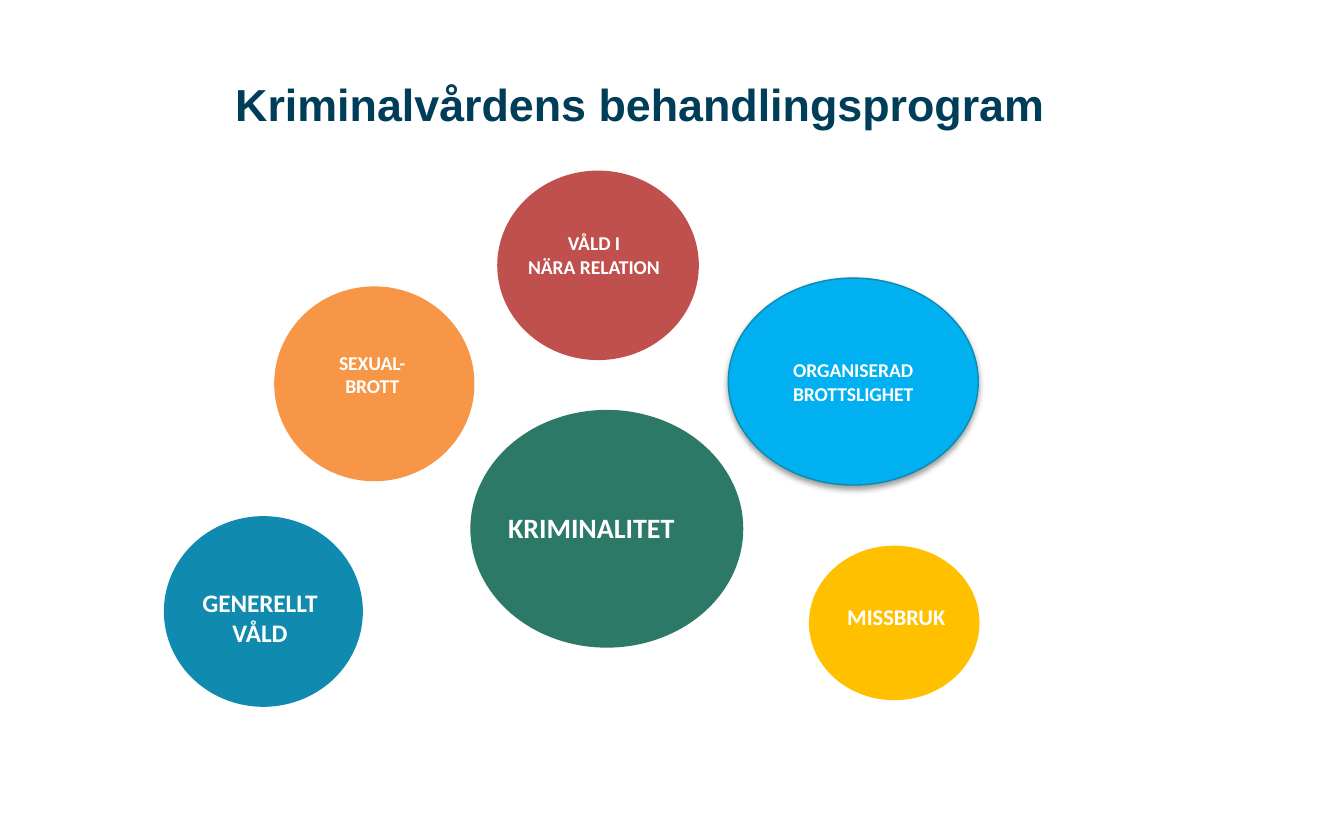
import pptx
import pptx.dml.color
import pptx.enum.shapes
import pptx.enum.text
import pptx.oxml
import pptx.util
from pptx.dml.color import RGBColor
from pptx.enum.text import MSO_ANCHOR, PP_ALIGN
from pptx.util import Pt

NAVY = RGBColor(0x00, 0x3D, 0x58)
WHITE = RGBColor(0xFF, 0xFF, 0xFF)
GREEN = RGBColor(0x2B, 0x79, 0x66)
TEAL = RGBColor(0x10, 0x8B, 0xAF)
RED = RGBColor(0xC0, 0x50, 0x4D)
ORANGE = RGBColor(0xF7, 0x96, 0x46)
YELLOW = RGBColor(0xFF, 0xC0, 0x00)
SKY = RGBColor(0x00, 0xB0, 0xF0)
SKY_EDGE = RGBColor(0x0C, 0x8A, 0xAF)

# Circle box, colour, label box, label, text size, alignment
PROGRAMMES = [
    ((252, 219.6, 146.2, 127.4), GREEN, (272.2, 273.6, 110.8, 18),
     "KRIMINALITET", 15, PP_ALIGN.LEFT),
    ((87.8, 276.5, 106.6, 102.2), TEAL, (108, 314.6, 62.6, 32.4),
     "GENERELLT\nVÅLD", 13.5, PP_ALIGN.CENTER),
    ((266.4, 91.4, 108, 101.5), RED, (281.5, 123.8, 73.4, 25.9),
     "VÅLD I\nNÄRA RELATION", 10.5, PP_ALIGN.CENTER),
    ((146.9, 153.4, 107.3, 104.4), ORANGE, (180.7, 187.9, 37.4, 25.2),
     "SEXUAL-\vBROTT", 10.5, PP_ALIGN.CENTER),
    ((433.4, 292.3, 91.4, 82.8), YELLOW, (444.2, 323.3, 72, 28.8),
     "MISSBRUK", 12, PP_ALIGN.CENTER),
]


def points(box):
    return [Pt(length) for length in box]


def remove_margins(frame):
    frame.margin_left = frame.margin_right = Pt(0)
    frame.margin_top = frame.margin_bottom = Pt(0)


def write_text(frame, text, size, color, font_name, alignment):
    frame.text = text
    for paragraph in frame.paragraphs:
        paragraph.alignment = alignment
        for run in paragraph.runs:
            run.font.name = font_name
            run.font.size = Pt(size)
            run.font.bold = True
            run.font.color.rgb = color


def add_title(slide, text):
    title = slide.shapes.title
    title.left, title.top, title.width, title.height = points((126, 33.8, 447.8, 36.7))
    frame = title.text_frame
    remove_margins(frame)
    frame.auto_size = pptx.enum.text.MSO_AUTO_SIZE.NONE
    frame.vertical_anchor = MSO_ANCHOR.BOTTOM
    write_text(frame, text, 24, NAVY, "Arial", PP_ALIGN.LEFT)
    frame.paragraphs[0].line_spacing = 0.9


def add_circle(slide, box, color):
    circle = slide.shapes.add_shape(pptx.enum.shapes.MSO_SHAPE.OVAL, *points(box))
    circle.shadow.inherit = False
    circle.fill.solid()
    circle.fill.fore_color.rgb = color
    circle.line.fill.background()
    return circle


def add_label(slide, box, text, size, alignment):
    frame = slide.shapes.add_textbox(*points(box)).text_frame
    remove_margins(frame)
    frame.word_wrap = True if "\n" not in text and "\v" not in text else False
    write_text(frame, text, size, WHITE, "Calibri", alignment)


def add_soft_shadow(shape):
    """Replace the shape's empty effect list with a shadow falling straight down."""
    effects = shape.element.spPr.find(pptx.oxml.ns.qn("a:effectLst"))
    effects.append(pptx.oxml.parse_xml(
        '<a:outerShdw xmlns:a="http://schemas.openxmlformats.org/drawingml/2006/main" '
        f'blurRad="{Pt(3.1)}" dist="{Pt(1.6)}" dir="5400000" rotWithShape="0">'
        '<a:srgbClr val="000000"><a:alpha val="38000"/></a:srgbClr></a:outerShdw>'))


def add_organised_crime(slide):
    circle = add_circle(slide, (390.2, 149, 133.9, 110.9), SKY)
    circle.line.color.rgb = SKY_EDGE
    circle.line.width = Pt(0.75)
    add_soft_shadow(circle)
    circle.text_frame.vertical_anchor = MSO_ANCHOR.MIDDLE
    write_text(circle.text_frame, "ORGANISERAD\nBROTTSLIGHET", 10.5, WHITE,
               "Calibri", PP_ALIGN.CENTER)


def main():
    presentation = pptx.Presentation()
    presentation.slide_width = Pt(720)
    presentation.slide_height = Pt(450)
    slide = presentation.slides.add_slide(presentation.slide_layouts[5])
    add_title(slide, "Kriminalvårdens behandlingsprogram")
    for circle_box, color, label_box, label, size, alignment in PROGRAMMES:
        add_circle(slide, circle_box, color)
        add_label(slide, label_box, label, size, alignment)
    add_organised_crime(slide)
    presentation.save("out.pptx")


if __name__ == "__main__":
    main()
